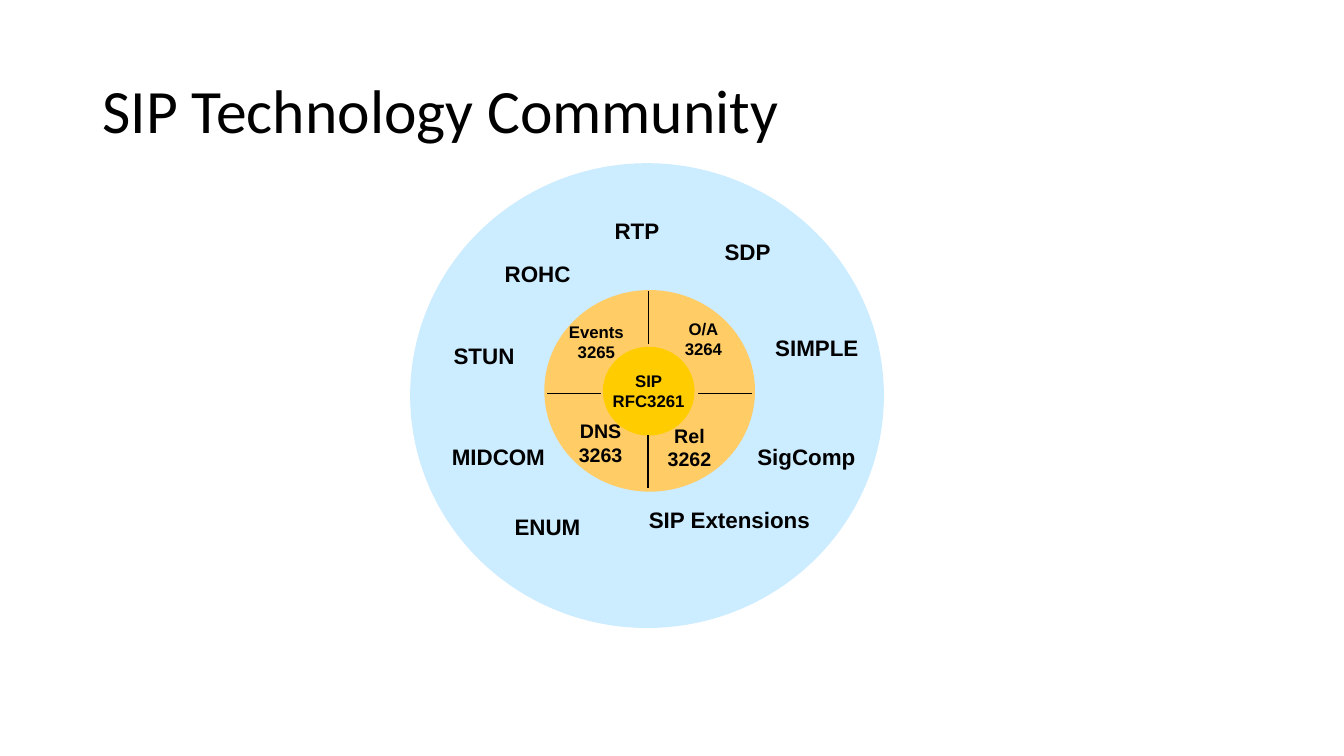
import pptx
import pptx.util
import pptx.dml.color
import pptx.enum.shapes
import pptx.enum.text
import pptx.oxml
from dataclasses import dataclass

Pt = pptx.util.Pt
RGB = pptx.dml.color.RGBColor.from_string
PP_ALIGN = pptx.enum.text.PP_ALIGN
ANCHOR = pptx.enum.text.MSO_ANCHOR


@dataclass(frozen=True)
class Theme:
    ink: str = "000000"
    outer: str = "CCECFF"
    ring: str = "FFCC66"
    core: str = "FFCC00"
    title_font: str = "Calibri"
    label_font: str = "Arial"
    title: int = 44
    large: int = 16
    medium: int = 14
    small: int = 12


THEME = Theme()

# text, left, top, width
OUTER_LABELS = [
    ("RTP", 430, 151.7, 50),
    ("SDP", 509, 166.5, 50),
    ("SIMPLE", 545, 235, 77),
    ("SigComp", 532, 312.8, 88),
    ("SIP Extensions", 454, 358, 134),
    ("ENUM", 358.5, 363.3, 65),
    ("MIDCOM", 314, 312.8, 84),
    ("STUN", 315, 240.5, 61.5),
    ("ROHC", 351.5, 182, 65),
]

# text, left, top, width, type size
RING_LABELS = [
    ("DNS\n3263", 405, 296, 48, THEME.medium),
    ("Events\n3265", 398, 226.5, 56, THEME.small),
    ("Rel\n3262", 468.5, 299, 48, THEME.medium),
    ("O/A\n3264", 480.5, 224, 44, THEME.small),
]

# x1, y1, x2, y2
SPOKES = [
    (463.2, 208, 463.2, 245.5),
    (462.8, 311, 462.8, 348.5),
    (391, 281.3, 429, 281.3),
    (498.8, 281, 537, 281),
]


def write_label(tf, text, size):
    """Fill a text frame with centred bold lines, one paragraph each."""
    tf.word_wrap = False
    tf.text = text
    for p in tf.paragraphs:
        p.alignment = PP_ALIGN.CENTER
        p.font.name = THEME.label_font
        p.font.size = Pt(size)
        p.font.bold = True
        p.font.color.rgb = RGB(THEME.ink)


def add_title(s, text):
    tf = s.shapes.add_textbox(Pt(66), Pt(29), Pt(828), Pt(104.4)).text_frame
    tf.word_wrap = True
    tf.vertical_anchor = ANCHOR.MIDDLE
    tf.text = text
    p = tf.paragraphs[0]
    p.line_spacing = 0.9
    p.font.name = THEME.title_font
    p.font.size = Pt(THEME.title)
    p.font.color.rgb = RGB(THEME.ink)


def add_disc(s, left, top, width, height, color):
    sp = s.shapes.add_shape(pptx.enum.shapes.MSO_SHAPE.OVAL,
                            Pt(left), Pt(top), Pt(width), Pt(height))
    sp.shadow.inherit = False
    sp.fill.solid()
    sp.fill.fore_color.rgb = RGB(color)
    sp.line.fill.background()
    return sp


def add_label(s, text, left, top, width, size):
    height = 1.2 * size * len(text.splitlines()) + 7.2
    sp = s.shapes.add_textbox(Pt(left), Pt(top), Pt(width), Pt(height))
    write_label(sp.text_frame, text, size)
    sp.text_frame.auto_size = pptx.enum.text.MSO_AUTO_SIZE.SHAPE_TO_FIT_TEXT


def add_spoke(s, x1, y1, x2, y2):
    line = s.shapes.add_connector(pptx.enum.shapes.MSO_CONNECTOR.STRAIGHT,
                                  Pt(x1), Pt(y1), Pt(x2), Pt(y2))
    line.line.color.rgb = RGB(THEME.ink)
    line.line.width = Pt(1)
    line._element.spPr.append(pptx.oxml.parse_xml(
        '<a:effectLst xmlns:a="http://schemas.openxmlformats.org/drawingml/2006/main"/>'))


def main():
    prs = pptx.Presentation()
    prs.slide_width, prs.slide_height = Pt(960), Pt(540)
    s = prs.slides.add_slide(prs.slide_layouts[6])

    add_disc(s, 293, 116.6, 338.4, 332, THEME.outer)
    add_disc(s, 388.8, 207.2, 150.5, 144, THEME.ring)
    add_title(s, "SIP Technology Community")
    core = add_disc(s, 430.6, 247.7, 65.5, 63.4, THEME.core)
    core.text_frame.vertical_anchor = ANCHOR.MIDDLE
    write_label(core.text_frame, "SIP\nRFC3261", THEME.small)

    for spoke in SPOKES:
        add_spoke(s, *spoke)
    for label in RING_LABELS:
        add_label(s, *label)
    for label in OUTER_LABELS:
        add_label(s, *label, THEME.large)

    prs.save("out.pptx")


if __name__ == "__main__":
    main()
